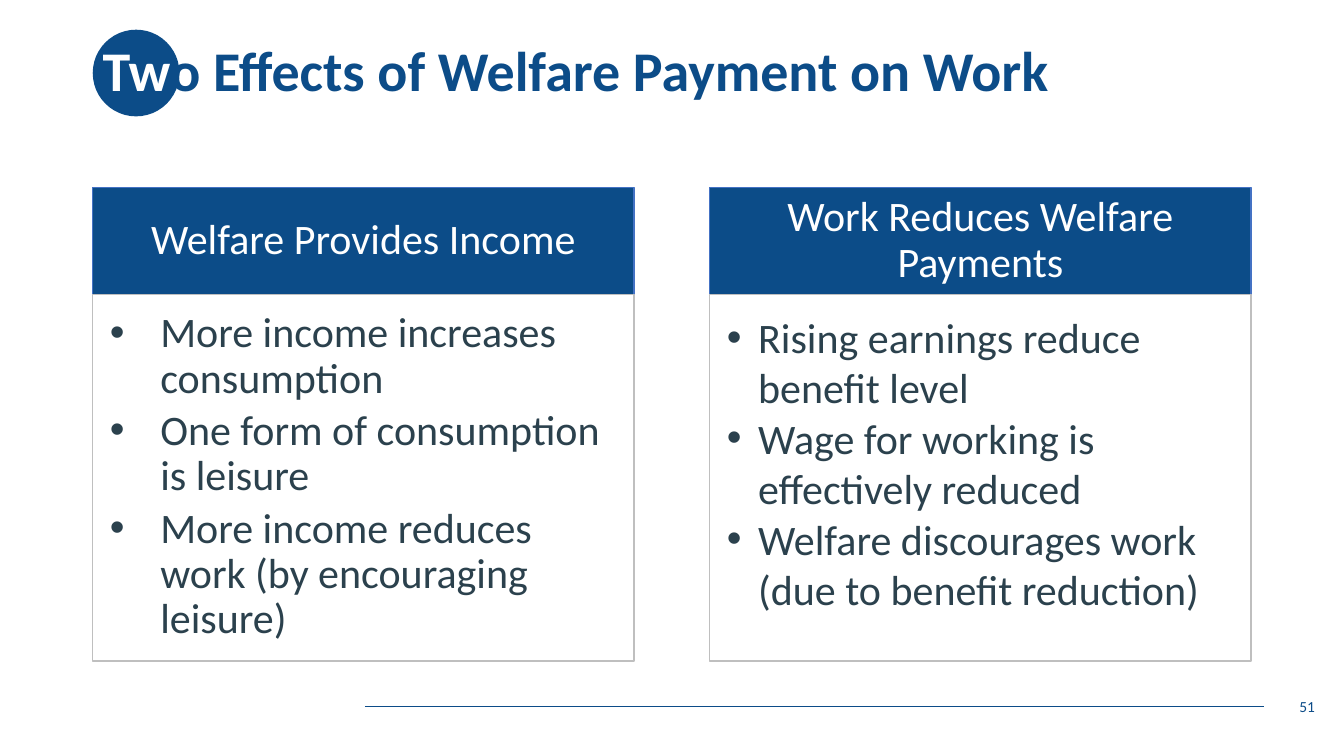
from dataclasses import dataclass

from lxml.etree import SubElement
from pptx import Presentation
from pptx.dml.color import RGBColor
from pptx.enum.shapes import MSO_CONNECTOR, MSO_SHAPE
from pptx.enum.text import MSO_ANCHOR, PP_ALIGN
from pptx.oxml.ns import qn
from pptx.util import Inches, Pt


@dataclass(frozen=True)
class Theme:
    font: str = "Calibri"
    navy: str = "0C4C88"
    white: str = "FFFFFF"
    ink: str = "2B414D"
    blue: str = "4472C4"
    gray: str = "BFBFBF"
    title: int = 40
    body: int = 30
    small: int = 11


THEME = Theme()


def color(code):
    return RGBColor.from_string(code)


def paint(shape, fill=None, line=None):
    shape.shadow.inherit = False
    if fill:
        shape.fill.solid()
        shape.fill.fore_color.rgb = color(fill)
    else:
        shape.fill.background()
    if line:
        shape.line.color.rgb = color(line)
        shape.line.width = Pt(1)
    else:
        shape.line.fill.background()


def write(shape, items, size=THEME.body, ink=THEME.ink, bold=False,
          align=PP_ALIGN.LEFT, anchor=MSO_ANCHOR.MIDDLE, pads=(0.1, 0.05, 0.1, 0.05),
          lead=None, after=0, hang=0):
    frame = shape.text_frame
    frame.word_wrap = True
    frame.vertical_anchor = anchor
    (frame.margin_left, frame.margin_top,
     frame.margin_right, frame.margin_bottom) = map(Inches, pads)
    for index, runs in enumerate(items):
        para = frame.add_paragraph() if index else frame.paragraphs[0]
        para.alignment = align
        para.line_spacing = lead
        para.space_after = Pt(after)
        if hang:
            props = para._p.get_or_add_pPr()
            props.set("marL", str(Inches(hang)))
            props.set("indent", str(-Inches(hang)))
            SubElement(props, qn("a:buFont"), typeface="Arial")
            SubElement(props, qn("a:buChar"), char="•")
        for text, tint in ([(runs, ink)] if isinstance(runs, str) else runs):
            run = para.add_run()
            run.text = text
            run.font.name = THEME.font
            run.font.size = Pt(size)
            run.font.bold = bold
            run.font.color.rgb = color(tint)


def header(slide, left, top, width, height):
    side = 0.86
    disc = slide.shapes.add_shape(
        MSO_SHAPE.OVAL, Inches(left), Inches(top + (height - side) / 2),
        Inches(side), Inches(side))
    paint(disc, THEME.navy)
    title = slide.shapes.add_textbox(*map(Inches, (left, top, width, height)))
    write(title, [[("Tw", THEME.white),
                   ("o Effects of Welfare Payment on Work", THEME.navy)]],
          size=THEME.title, bold=True, lead=0.9)


def panel(slide, left, top, width, height, head, points, **style):
    cap = 1.06
    band = slide.shapes.add_shape(
        MSO_SHAPE.RECTANGLE, *map(Inches, (left, top, width, cap)))
    paint(band, THEME.navy, THEME.blue)
    write(band, [head], ink=THEME.white, align=PP_ALIGN.CENTER,
          pads=(0.23, 0.13, 0.23, 0.13), lead=0.9)
    body = slide.shapes.add_shape(
        MSO_SHAPE.RECTANGLE, *map(Inches, (left, top + cap, width, height - cap)))
    paint(body, line=THEME.gray)
    write(body, points, anchor=MSO_ANCHOR.TOP,
          pads=(0.17, 0.17, 0.23, 0.26), **style)


def footer(slide, left, top, width, height, number):
    mid = Inches(top + height / 2)
    rule = slide.shapes.add_connector(
        MSO_CONNECTOR.STRAIGHT, Inches(left), mid, Inches(left + 8.92), mid)
    rule.line.color.rgb = color(THEME.navy)
    rule.line.width = Pt(0.5)
    SubElement(rule._element.spPr, qn("a:effectLst"))
    wide = 3
    page = slide.shapes.add_textbox(
        *map(Inches, (left + width - wide, top, wide, height)))
    write(page, [number], size=THEME.small, ink=THEME.navy, align=PP_ALIGN.RIGHT)


def main():
    deck = Presentation()
    deck.slide_width, deck.slide_height = Inches(13.33), Inches(7.5)
    slide = deck.slides.add_slide(deck.slide_layouts[6])
    header(slide, 0.92, 0, 11.5, 1.45)
    panels = [
        ("Welfare Provides Income",
         ["More income increases consumption",
          "One form of consumption is leisure",
          "More income reduces work (by encouraging leisure)"],
         dict(hang=0.5, lead=0.9, after=5)),
        ("Work Reduces Welfare Payments",
         ["Rising earnings reduce benefit level",
          "Wage for working is effectively reduced",
          "Welfare discourages work (due to benefit reduction)"],
         dict(hang=0.31)),
    ]
    for index, (head, points, style) in enumerate(panels):
        panel(slide, 0.92 + index * 6.12, 1.86, 5.37, 4.7, head, points, **style)
    footer(slide, 3.62, 6.81, 9.52, 0.4, "51")
    deck.save("out.pptx")


if __name__ == "__main__":
    main()
